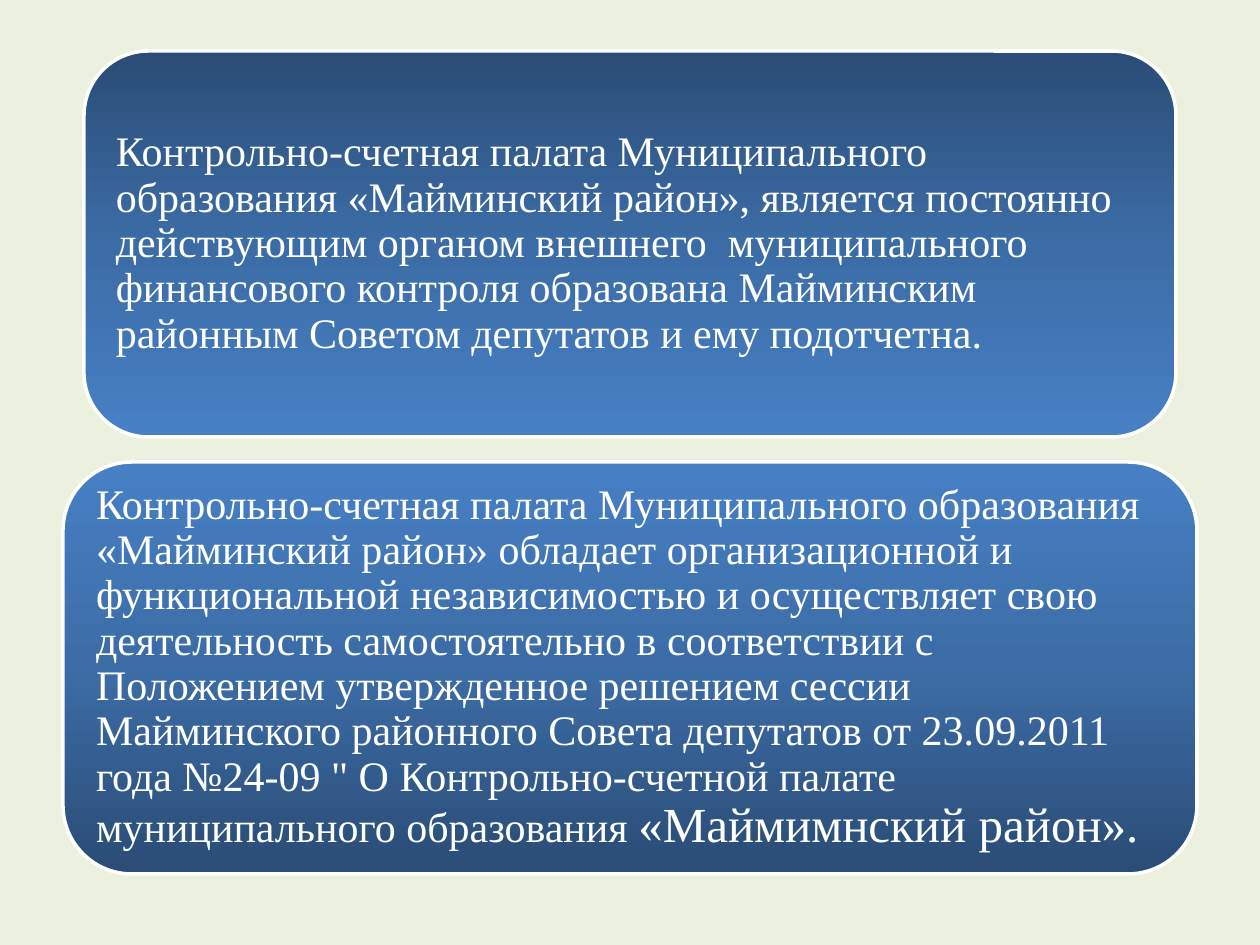
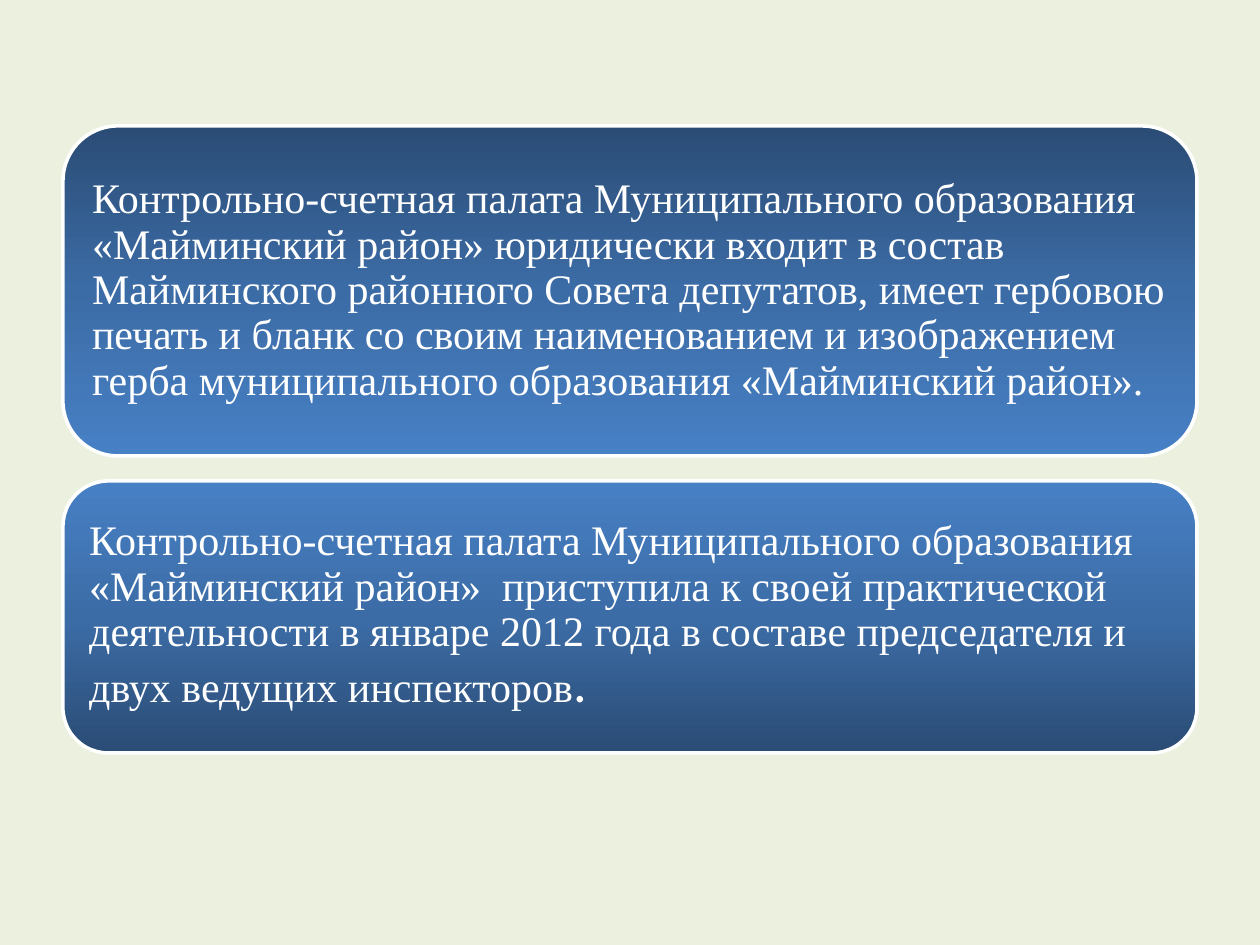
from copy import deepcopy

from pptx import Presentation
from pptx.dml.color import RGBColor
from pptx.enum.shapes import MSO_SHAPE
from pptx.enum.text import MSO_ANCHOR, PP_ALIGN
from pptx.oxml.ns import qn
from pptx.util import Emu, Pt

SLIDE_W, SLIDE_H = 1260, 945
EMU_PER_PX = 914400 / 126
GAP = 25
INSET = 13
FONT = "Times New Roman"
COLORS = {
    "background": "EBF1DE",
    "dark": "2A4C75",
    "middle": "3C6CA6",
    "light": "4780C5",
    "white": "FFFFFF",
}


def px(n):
    """Turn pixels into EMU."""
    return Emu(round(n * EMU_PER_PX))


def color(name):
    """Look up a palette colour."""
    return RGBColor.from_string(COLORS[name])


def add_run(p, text, size=24, font=FONT, fill="white"):
    """Add formatted text to a paragraph."""
    r = p.add_run()
    r.text = text
    r.font.size = Pt(size)
    r.font.name = font
    r.font.color.rgb = color(fill)


def fill_gradient(sp, angle):
    """Fill a shape with the three-stop blue gradient."""
    sp.fill.gradient()
    sp.fill.gradient_angle = angle
    stops = sp._element.spPr.find(qn("a:gradFill")).find(qn("a:gsLst"))
    stops.append(deepcopy(stops[0]))
    names = ("dark", "middle", "light")
    for i, (stop, name) in enumerate(zip(sp.fill.gradient_stops, names)):
        stop.position = i / 2
        stop.color.rgb = color(name)


def add_panel(s, top, width, height, angle, runs):
    """Add a horizontally centred rounded panel holding one paragraph."""
    left = (SLIDE_W - width) // 2
    sp = s.shapes.add_shape(MSO_SHAPE.ROUNDED_RECTANGLE,
                            px(left), px(top), px(width), px(height))
    sp.shadow.inherit = False
    fill_gradient(sp, angle)
    sp.line.color.rgb = color("white")
    sp.line.width = Pt(2)
    tf = sp.text_frame
    tf.word_wrap = True
    tf.vertical_anchor = MSO_ANCHOR.MIDDLE
    tf.margin_left = tf.margin_right = px(INSET)
    tf.margin_top = tf.margin_bottom = px(INSET)
    p = tf.paragraphs[0]
    p.alignment = PP_ALIGN.LEFT
    p.line_spacing = 0.9
    for text, style in runs:
        add_run(p, text, **style)


def add_panel_slide(prs, top, panels):
    """Add a slide of stacked panels whose gradients mirror each other."""
    s = prs.slides.add_slide(prs.slide_layouts[6])
    s.background.fill.solid()
    s.background.fill.fore_color.rgb = color("background")
    for i, (width, height, runs) in enumerate(panels):
        add_panel(s, top, width, height, 90 if i % 2 else 270, runs)
        top += height + GAP


def main():
    """Build both slides and save the presentation."""
    prs = Presentation()
    prs.slide_width, prs.slide_height = px(SLIDE_W), px(SLIDE_H)
    add_panel_slide(prs, 51, [
        (1092, 386, [
            ("Контрольно-счетная палата Муниципального образования "
             "«Майминский район», является постоянно действующим органом "
             "внешнего  муниципального финансового контроля образована "
             "Майминским районным Советом депутатов и ему подотчетна.", {}),
        ]),
        (1134, 412, [
            ("Контрольно-счетная палата Муниципального образования "
             "«Майминский район» обладает организационной и функциональной "
             "независимостью и осуществляет свою деятельность самостоятельно "
             "в соответствии с Положением утвержденное решением сессии "
             "Майминского районного Совета депутатов от 23.09.2011 года "
             "№24-09 \" О Контрольно-счетной палате муниципального "
             "образования ", {}),
            ("«Маймимнский район».", {"size": 28}),
        ]),
    ])
    add_panel_slide(prs, 126, [
        (1134, 330, [
            ("Контрольно-счетная палата Муниципального образования "
             "«Майминский район» юридически входит в состав Майминского "
             "районного Совета депутатов, имеет гербовою печать и бланк со "
             "своим наименованием и изображением герба муниципального "
             "образования «Майминский район».", {}),
        ]),
        (1134, 272, [
            ("Контрольно-счетная палата Муниципального образования "
             "«Майминский район»  приступила к своей практической "
             "деятельности в январе 2012 года в составе председателя и двух "
             "ведущих инспекторов", {}),
            (".", {"size": 31, "font": "Calibri"}),
        ]),
    ])
    prs.save("out.pptx")


if __name__ == "__main__":
    main()
